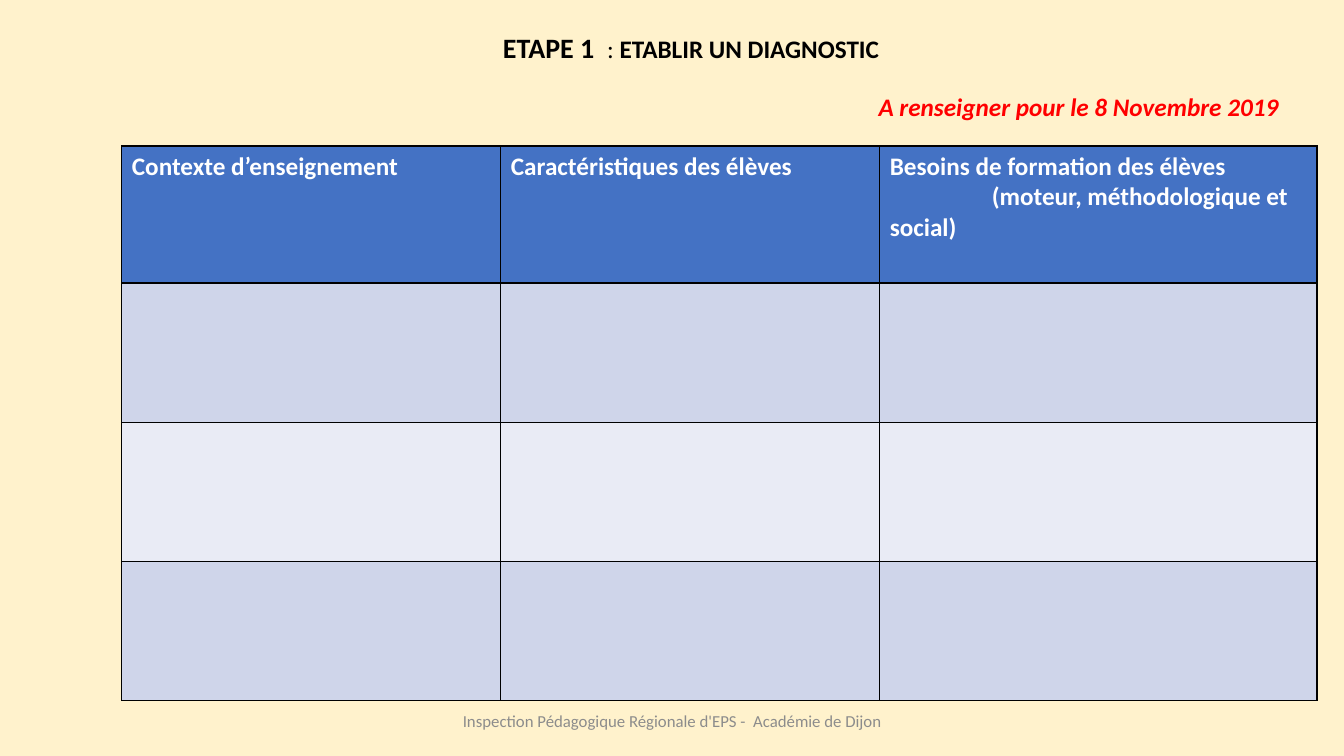
from dataclasses import dataclass

from lxml.etree import SubElement
from pptx import Presentation
from pptx.dml.color import RGBColor as Rgb
from pptx.enum.text import MSO_ANCHOR as Anchor
from pptx.enum.text import MSO_AUTO_SIZE as Fit
from pptx.enum.text import PP_ALIGN as Align
from pptx.oxml.ns import qn
from pptx.util import Cm, Pt

HUES = {
    "page": "FFF2CC",
    "ink": "000000",
    "head": "4472C4",
    "band": "CFD5EA",
    "pale": "E9EBF5",
    "white": "FFFFFF",
    "grey": "8C8C8C",
    "alert": "FF0000",
}
FONT = "Calibri"


@dataclass
class Box:
    left: float
    top: float
    width: float
    height: float

    def sides(self) -> tuple:
        return Cm(self.left), Cm(self.top), Cm(self.width), Cm(self.height)


@dataclass
class Row:
    height: float
    fill: str
    texts: tuple = ((), (), ())


TITLE = Box(12.42, 0.64, 10.08, 1.12)
DATE = Box(21.89, 2.18, 11.02, 1.02)
GRID = Box(3.07, 3.68, 30.12, 13.98)
FOOT = Box(11.23, 17.65, 11.43, 1.02)

COLS = (9.55, 9.55, 11.02)
INDENT = 2.57
ROWS = (
    Row(3.45, "head", (
        ("Contexte d’enseignement",),
        ("Caractéristiques des élèves",),
        ("Besoins de formation des élèves", "(moteur, méthodologique et social)"),
    )),
    Row(3.51, "band"),
    Row(3.51, "pale"),
    Row(3.51, "band"),
)


def hue(name: str) -> Rgb:
    return Rgb.from_string(HUES[name])


def write(para, text: str, size: float = 18, color: str = "ink",
          bold: bool = False, italic: bool = False, align=Align.LEFT) -> None:
    """Add one formatted run to a paragraph."""
    para.alignment = align
    run = para.add_run()
    run.text = text
    font = run.font
    font.name, font.size = FONT, Pt(size)
    font.bold, font.italic = bold, italic
    font.color.rgb = hue(color)


def frame(shape, wrap: bool, anchor=Anchor.TOP):
    """Set the shape's text layout and return its first paragraph."""
    body = shape.text_frame
    body.auto_size = Fit.NONE
    body.word_wrap = wrap
    body.vertical_anchor = anchor
    return body.paragraphs[0]


def edge(cell) -> None:
    """Draw a thin line on all four sides, ahead of the cell's fill."""
    props = cell._tc.get_or_add_tcPr()
    for spot, tag in enumerate(("a:lnL", "a:lnR", "a:lnT", "a:lnB")):
        line = SubElement(props, qn(tag), w=str(Pt(1)))
        fill = SubElement(line, qn("a:solidFill"))
        SubElement(fill, qn("a:srgbClr"), val=HUES["ink"])
        props.insert(spot, line)


def draw_grid(slide) -> None:
    grid = slide.shapes.add_table(len(ROWS), len(COLS), *GRID.sides()).table
    for col, width in zip(grid.columns, COLS):
        col.width = Cm(width)
    for line, row in zip(grid.rows, ROWS):
        line.height = Cm(row.height)
        for cell, texts in zip(line.cells, row.texts):
            cell.fill.solid()
            cell.fill.fore_color.rgb = hue(row.fill)
            edge(cell)
            body = cell.text_frame
            for spot, text in enumerate(texts):
                para = body.add_paragraph() if spot else body.paragraphs[0]
                write(para, text, color="white", bold=True)
                if spot:
                    para._p.get_or_add_pPr().set("indent", str(Cm(INDENT)))


def main() -> None:
    deck = Presentation()
    deck.slide_width, deck.slide_height = Cm(33.87), Cm(19.05)
    slide = deck.slides.add_slide(deck.slide_layouts[5])
    back = slide.background.fill
    back.solid()
    back.fore_color.rgb = hue("page")

    title = slide.shapes.title
    title.left, title.top, title.width, title.height = TITLE.sides()
    para = frame(title, wrap=False)
    write(para, "ETAPE 1  ", size=20, bold=True)
    write(para, ": ")
    write(para, "ETABLIR UN DIAGNOSTIC", bold=True)

    draw_grid(slide)

    foot = slide.shapes.add_textbox(*FOOT.sides())
    write(frame(foot, wrap=True, anchor=Anchor.MIDDLE),
          "Inspection Pédagogique Régionale d'EPS -  Académie de Dijon",
          size=12, color="grey", align=Align.CENTER)

    date = slide.shapes.add_textbox(*DATE.sides())
    write(frame(date, wrap=False), "A renseigner pour le 8 Novembre 2019",
          color="alert", bold=True, italic=True)

    deck.save("out.pptx")


if __name__ == "__main__":
    main()
